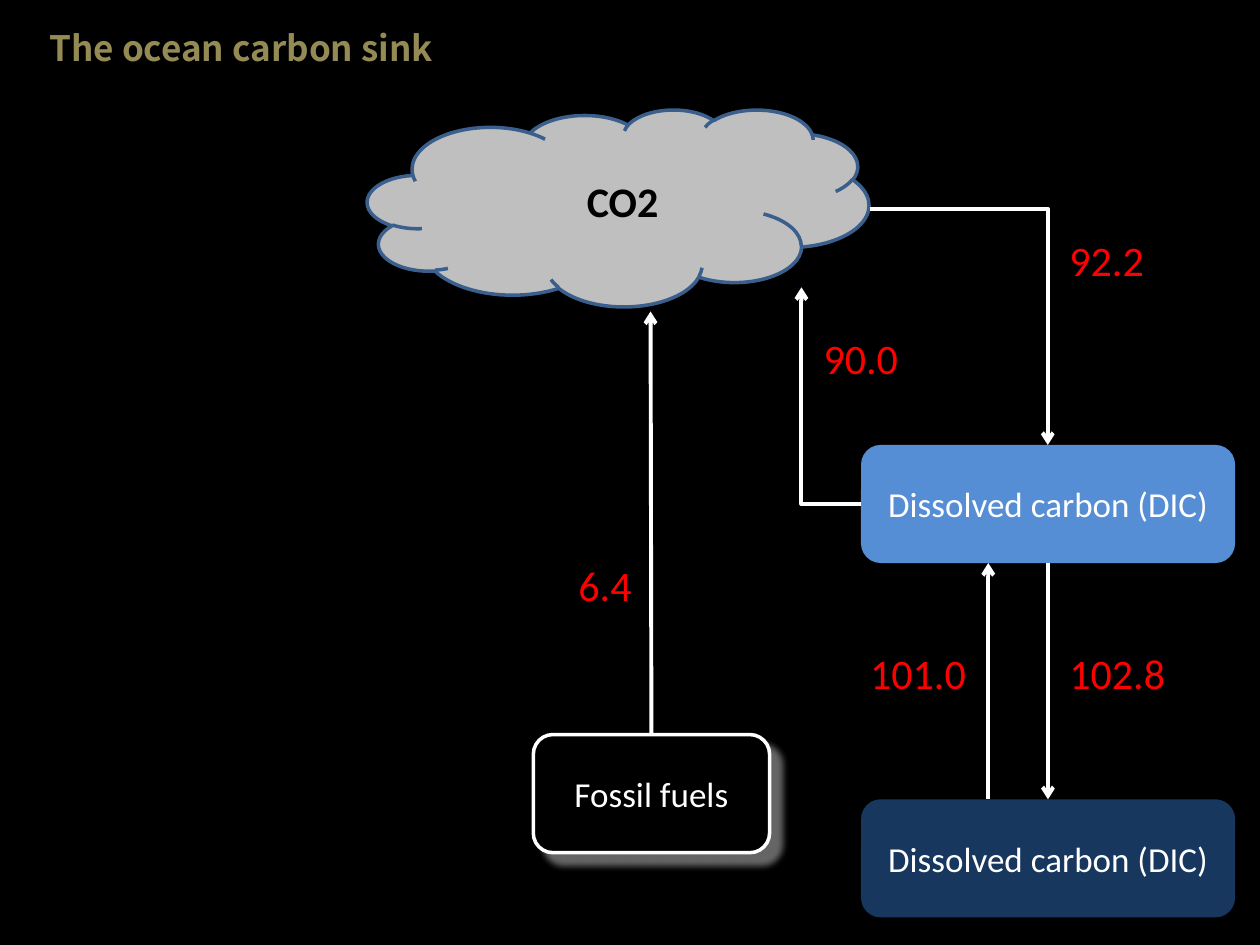
from lxml.etree import SubElement
from pptx import Presentation
from pptx.dml.color import RGBColor
from pptx.enum.shapes import MSO_CONNECTOR, MSO_SHAPE
from pptx.enum.text import MSO_ANCHOR, PP_ALIGN
from pptx.oxml.ns import qn
from pptx.util import Pt


def rgb(code):
    return RGBColor.from_string(code)


def write(shape, text, size, color, align, bold=False, font="Calibri"):
    frame = shape.text_frame
    frame.word_wrap = True
    para = frame.paragraphs[0]
    para.alignment = align
    run = para.add_run()
    run.text = text
    run.font.name = font
    run.font.size = Pt(size)
    run.font.bold = bold
    run.font.color.rgb = rgb(color)


deck = Presentation()
deck.slide_width, deck.slide_height = Pt(720), Pt(540)
slide = deck.slides.add_slide(deck.slide_layouts[5])
slide.background.fill.solid()
slide.background.fill.fore_color.rgb = rgb("000000")
shapes = slide.shapes

# Title
title = shapes.title
title.left, title.top, title.width, title.height = Pt(21), Pt(11.5), Pt(416), Pt(31.5)
title.text_frame.vertical_anchor = MSO_ANCHOR.TOP
write(title, "The ocean carbon sink", 20, "948A54", PP_ALIGN.LEFT, True, "Noto Sans CJK KR")

# Carbon stores: kind, left, top, width, height, fill, line, text
cloud, surface, deep, fossil = [], [], [], []
stores = []
for kind, x, y, w, h, fill, line, text in (
    (MSO_SHAPE.CLOUD, 210, 62.5, 286.5, 112.5, "BFBFBF", "3A5F8C", ""),
    (MSO_SHAPE.ROUNDED_RECTANGLE, 492, 254.25, 213.75, 67.5, "558ED5", None, "Dissolved carbon (DIC)"),
    (MSO_SHAPE.ROUNDED_RECTANGLE, 492, 456.75, 213.75, 67.5, "17375E", None, "Dissolved carbon (DIC)"),
    (MSO_SHAPE.ROUNDED_RECTANGLE, 304.75, 419.75, 135, 67.5, "000000", "FFFFFF", "Fossil fuels"),
):
    store = shapes.add_shape(kind, Pt(x), Pt(y), Pt(w), Pt(h))
    store.shadow.inherit = False
    store.fill.solid()
    store.fill.fore_color.rgb = rgb(fill)
    if line:
        store.line.color.rgb = rgb(line)
        store.line.width = Pt(2)
    else:
        store.line.fill.background()
    if text:
        store.text_frame.vertical_anchor = MSO_ANCHOR.MIDDLE
        write(store, text, 20, "FFFFFF", PP_ALIGN.CENTER)
    stores.append(store)
cloud, surface, deep, fossil = stores

# Soft white shadow behind the fossil fuels
effects = fossil._element.spPr.find(qn("a:effectLst"))
shadow = SubElement(effects, qn("a:outerShdw"), blurRad=str(Pt(4)), dist=str(Pt(9)),
                    dir="2700000", algn="tl", rotWithShape="0")
tint = SubElement(shadow, qn("a:srgbClr"), val="FFFFFF")
SubElement(tint, qn("a:alpha"), val="40000")

# Flows: start, end, and the (store, side) joined at each end
for start, end, tie, goal in (
    ((497, 119.25), (598.75, 254.25), None, None),
    ((598.75, 321.75), (598.75, 456.75), (surface, 2), (deep, 0)),
    ((492, 288), (458, 164.25), None, None),
    ((564.75, 456.75), (564.75, 321.75), None, None),
    ((372.25, 419.75), (371.75, 178), (fossil, 0), None),
):
    bent = abs(start[0] - end[0]) > 1
    kind = MSO_CONNECTOR.ELBOW if bent else MSO_CONNECTOR.STRAIGHT
    flow = shapes.add_connector(kind, *[Pt(v) for v in start + end])
    if tie:
        flow.begin_connect(*tie)
    if goal:
        flow.end_connect(*goal)
    flow.line.color.rgb = rgb("FFFFFF")
    flow.line.width = Pt(2.25)
    props = flow._element.spPr
    if bent:
        props.find(qn("a:prstGeom")).set("prst", "bentConnector2")
    SubElement(props.find(qn("a:ln")), qn("a:tailEnd"), type="arrow")
    SubElement(props, qn("a:effectLst"))

# Labels
for text, x, y, w, color, align, bold in (
    ("CO2", 328.25, 96.5, 56.25, "000000", PP_ALIGN.LEFT, True),
    ("6.4", 289.5, 316, 78.5, "FF0000", PP_ALIGN.RIGHT, False),
    ("92.2", 604, 130.5, 78.5, "FF0000", PP_ALIGN.LEFT, False),
    ("90.0", 463.5, 186.5, 78.5, "FF0000", PP_ALIGN.LEFT, False),
    ("101.0", 480.5, 366.5, 78.5, "FF0000", PP_ALIGN.RIGHT, False),
    ("102.8", 604, 366.5, 78.5, "FF0000", PP_ALIGN.LEFT, False),
):
    label = shapes.add_textbox(Pt(x), Pt(y), Pt(w), Pt(36))
    write(label, text, 24, color, align, bold)

deck.save("out.pptx")
